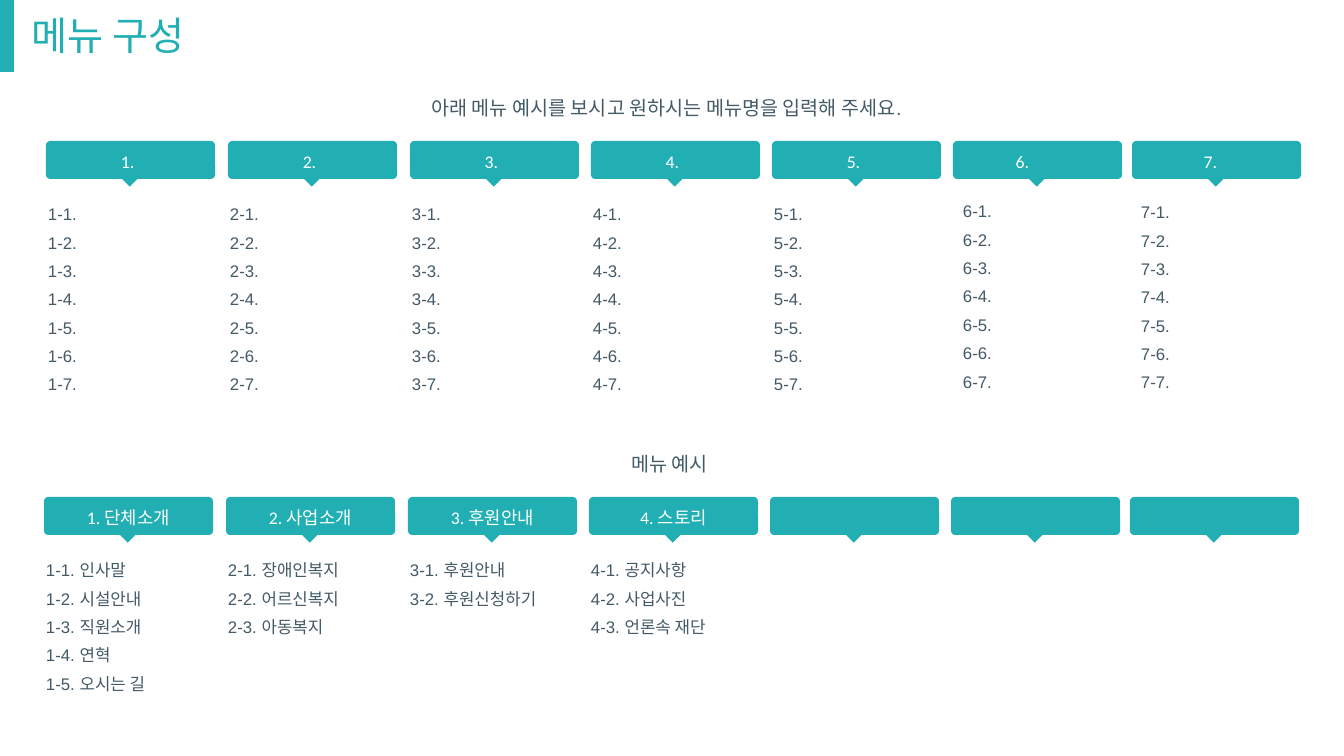
from pptx import Presentation
from pptx.dml.color import RGBColor
from pptx.enum.shapes import MSO_SHAPE
from pptx.enum.text import MSO_ANCHOR, PP_ALIGN
from pptx.util import Emu, Pt

RECTANGLE, ROUNDED = MSO_SHAPE.RECTANGLE, MSO_SHAPE.ROUNDED_RECTANGLE
LEFT, CENTER = PP_ALIGN.LEFT, PP_ALIGN.CENTER
TOP, MIDDLE = MSO_ANCHOR.TOP, MSO_ANCHOR.MIDDLE

COLORS = {"teal": "21AFB4", "slate": "435A67", "white": "FFFFFF"}
TITLE = "메뉴 구성"
PROMPT = "아래 메뉴 예시를 보시고 원하시는 메뉴명을 입력해 주세요."
EXAMPLE_HEADING = "메뉴 예시"
MENU_COUNT = 7
BLANK_MENUS = [
    (f"{menu}.", [f"{menu}-{item}." for item in range(1, 8)])
    for menu in range(1, MENU_COUNT + 1)
]
EXAMPLE_MENUS = [
    ("1. 단체소개", ["1-1. 인사말", "1-2. 시설안내", "1-3. 직원소개", "1-4. 연혁", "1-5. 오시는 길"]),
    ("2. 사업소개", ["2-1. 장애인복지", "2-2. 어르신복지", "2-3. 아동복지"]),
    ("3. 후원안내", ["3-1. 후원안내", "3-2. 후원신청하기"]),
    ("4. 스토리", ["4-1. 공지사항", "4-2. 사업사진", "4-3. 언론속 재단"]),
    ("", []),
    ("", []),
    ("", []),
]

# Lengths in px
EMU_PER_PX = 914400 / 100.8
SLIDE_WIDTH, SLIDE_HEIGHT = 1344, 756
COLUMN_LEFTS = [46, 228, 410, 591, 772, 953, 1132]
HEADER_WIDTH, HEADER_HEIGHT = 169, 38
POINTER_WIDTH, POINTER_HEIGHT = 26, 24
LIST_WIDTH = 161
INSET = 2
# Menu rows: top, shift of all columns, shift of labels, height of lists
BLANK_ROW = (141, 0, -3, 197)
EXAMPLE_ROW = (497, -2, 0, 142)
# Blank menus set apart from their column: label shift, list shift right, list shift down
NUDGES = {5: (-12, 8, -3), 6: (-3, 7, -2)}


def px(length):
    return Emu(round(length * EMU_PER_PX))


def color(name):
    return RGBColor.from_string(COLORS[name])


def add_block(shapes, kind, left, top, width, height):
    shape = shapes.add_shape(kind, px(left), px(top), px(width), px(height))
    shape.shadow.inherit = False
    shape.fill.solid()
    shape.fill.fore_color.rgb = color("teal")
    shape.line.fill.background()
    return shape


def add_text(shapes, box, lines, size, tint, font="Arial", align=LEFT,
             anchor=TOP, wrap=True, spacing=None, before=0):
    """Add a text box at box (left, top, width, height), one paragraph a line."""
    frame = shapes.add_textbox(*map(px, box)).text_frame
    frame.word_wrap = wrap
    frame.vertical_anchor = anchor
    frame.margin_left = frame.margin_right = px(INSET)
    frame.margin_top = frame.margin_bottom = px(INSET)
    for index, line in enumerate(lines):
        paragraph = frame.add_paragraph() if index else frame.paragraphs[0]
        paragraph.alignment = align
        paragraph.line_spacing = spacing
        paragraph.space_before = Pt(before)
        run = paragraph.add_run()
        run.text = line
        run.font.name = font
        run.font.size = Pt(size)
        run.font.color.rgb = color(tint)


def add_menu(slide, left, top, label, items, label_shift, list_shift, list_height):
    """Add a header with its pointer, label and list of items as one group."""
    shapes = slide.shapes.add_group_shape().shapes
    header = add_block(shapes, ROUNDED, left, top, HEADER_WIDTH, HEADER_HEIGHT)
    header.adjustments[0] = 0.11
    pointer = add_block(shapes, RECTANGLE, left + (HEADER_WIDTH - POINTER_WIDTH) / 2,
                        top + 16, POINTER_WIDTH, POINTER_HEIGHT)
    pointer.rotation = 315
    if label:
        add_text(shapes, (left + label_shift, top + 7, HEADER_WIDTH, 26), [label],
                 12.7, "white", "Calibri", CENTER, MIDDLE, wrap=False)
    if items:
        right, down = list_shift
        add_text(shapes, (left + right, top + 57 + down, LIST_WIDTH, list_height),
                 items, 12, "slate", spacing=1.2, before=3)


def add_menu_row(slide, menus, row, nudges):
    top, column_shift, label_shift, list_height = row
    for index, (left, (label, items)) in enumerate(zip(COLUMN_LEFTS, menus)):
        nudge, right, down = nudges.get(index, (0, 0, 0))
        add_menu(slide, left + column_shift, top, label, items,
                 label_shift + nudge, (right, down), list_height)


def main():
    presentation = Presentation()
    presentation.slide_width = px(SLIDE_WIDTH)
    presentation.slide_height = px(SLIDE_HEIGHT)
    slide = presentation.slides.add_slide(presentation.slide_layouts[6])
    add_block(slide.shapes, RECTANGLE, 0, 0, 14, 72)
    add_text(slide.shapes, (30, 13, 612, 49), [TITLE], 28, "teal",
             anchor=MIDDLE, spacing=0.9)
    add_text(slide.shapes, (163, 94, 1007, 33), [PROMPT], 14, "slate", align=CENTER)
    add_menu_row(slide, BLANK_MENUS, BLANK_ROW, NUDGES)
    add_text(slide.shapes, (166, 450, 1007, 33), [EXAMPLE_HEADING], 14, "slate", align=CENTER)
    add_menu_row(slide, EXAMPLE_MENUS, EXAMPLE_ROW, {})
    presentation.save("out.pptx")


if __name__ == "__main__":
    main()
